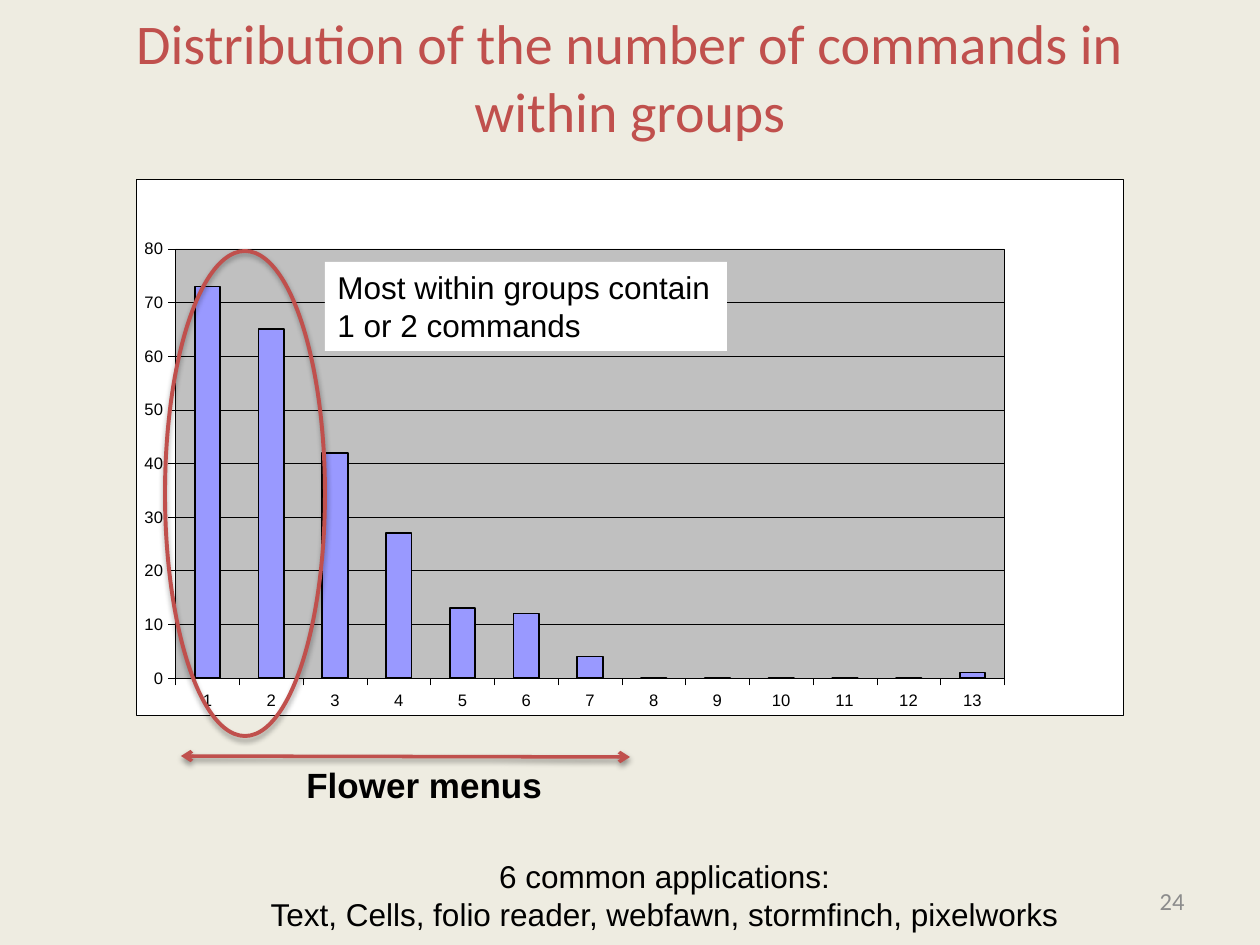
from lxml.etree import SubElement
from pptx import Presentation
from pptx.chart.data import CategoryChartData
from pptx.dml.color import RGBColor
from pptx.enum.chart import XL_CHART_TYPE, XL_TICK_MARK
from pptx.enum.shapes import MSO_CONNECTOR, MSO_SHAPE
from pptx.enum.text import MSO_ANCHOR, MSO_AUTO_SIZE, PP_ALIGN
from pptx.oxml import parse_xml
from pptx.oxml.ns import nsdecls, qn
from pptx.util import Emu, Pt

PX = 914400 / 126
THEME = {
    "background": RGBColor(0xEE, 0xEC, 0xE1), "accent": RGBColor(0xC0, 0x50, 0x4D),
    "ink": RGBColor(0, 0, 0), "muted": RGBColor(0x8C, 0x8C, 0x8C),
    "white": RGBColor(255, 255, 255), "plot": RGBColor(0xC0, 0xC0, 0xC0),
    "bar": RGBColor(0x99, 0x99, 0xFF),
    "body_font": "Arial", "title_font": "Calibri",
    "title": Pt(32), "label": Pt(20), "body": Pt(18), "number": Pt(14), "axis": Pt(9.5),
}


def px(*lengths):
    return [Emu(round(length * PX)) for length in lengths]


def write(shape, lines, font, frame_format, align=PP_ALIGN.LEFT):
    """Fill a shape with one paragraph per line, all in the same format."""
    frame = shape.text_frame
    for name, value in frame_format.items():
        setattr(frame, name, value)
    for index, line in enumerate(lines):
        paragraph = frame.paragraphs[0] if index == 0 else frame.add_paragraph()
        paragraph.text = line
        paragraph.alignment = align
        color = font["color"]
        paragraph.font.color.rgb = color
        for name in font.keys() - {"color"}:
            setattr(paragraph.font, name, font[name])


prs = Presentation()
prs.slide_width, prs.slide_height = px(1260, 945)
slide = prs.slides.add_slide(prs.slide_layouts[6])
slide.background.fill.solid()
slide.background.fill.fore_color.rgb = THEME["background"]
shapes = slide.shapes

# Distribution chart
distribution = CategoryChartData()
distribution.categories = [str(size) for size in range(1, 14)]
distribution.add_series("Series 1", [73, 65, 42, 27, 13, 12, 4, 0, 0, 0, 0, 0, 1])
chart = shapes.add_chart(
    XL_CHART_TYPE.COLUMN_CLUSTERED, *px(136, 179, 987, 537), distribution).chart
chart.has_legend = chart.has_title = False
chart.font.name, chart.font.size = THEME["body_font"], THEME["axis"]
chart.font.color.rgb = THEME["ink"]

chart.value_axis.maximum_scale = 80
chart.value_axis.minimum_scale = 0
chart.value_axis.major_unit = 10
chart.value_axis.has_major_gridlines = True
for axis in (chart.category_axis, chart.value_axis):
    axis.major_tick_mark = XL_TICK_MARK.OUTSIDE
for rule in (chart.category_axis.format.line, chart.value_axis.format.line,
             chart.value_axis.major_gridlines.format.line):
    rule.color.rgb, rule.width = THEME["ink"], Pt(0.25)

plot = chart.plots[0]
plot.gap_width = 150
plot.vary_by_categories = False
bars = plot.series[0]
bars.format.fill.solid()
bars.format.fill.fore_color.rgb = THEME["bar"]
bars.format.line.color.rgb, bars.format.line.width = THEME["ink"], Pt(1)

chart_root = chart.element.find(qn("c:chart"))
plot_area = chart_root.find(qn("c:plotArea"))
for old_layout in plot_area.findall(qn("c:layout")):
    plot_area.remove(old_layout)
layout = parse_xml(f'<c:layout {nsdecls("c")}><c:manualLayout/></c:layout>')
settings = {"layoutTarget": "inner", "xMode": "edge", "yMode": "edge",
            "x": 0.04, "y": 0.13, "w": 0.84, "h": 0.8}
for name, value in settings.items():
    SubElement(layout[0], qn(f"c:{name}")).set("val", str(value))
plot_area.insert(0, layout)

for last_part, fill in ((plot_area[-1], THEME["plot"]), (chart_root, THEME["white"])):
    last_part.addnext(parse_xml(
        f'<c:spPr {nsdecls("c", "a")}><a:solidFill><a:srgbClr val="{fill}"/></a:solidFill>'
        f'<a:ln w="3175"><a:solidFill><a:srgbClr val="{THEME["ink"]}"/></a:solidFill></a:ln>'
        '</c:spPr>'))

# Range covered by flower menus
menu_range = shapes.add_connector(MSO_CONNECTOR.STRAIGHT, *px(181, 756, 630, 757))
menu_range.line.color.rgb, menu_range.line.width = THEME["accent"], Pt(2)
for end in ("headEnd", "tailEnd"):
    SubElement(menu_range.line._get_or_add_ln(), qn(f"a:{end}")).set("type", "arrow")

# Text around the chart
body_font = {"name": THEME["body_font"], "size": THEME["body"], "color": THEME["ink"]}
label_font = body_font | {"size": THEME["label"], "bold": True}
title_font = {"name": THEME["title_font"], "size": THEME["title"], "color": THEME["accent"]}
number_font = title_font | {"size": THEME["number"], "color": THEME["muted"]}
growing = {"word_wrap": True, "auto_size": MSO_AUTO_SIZE.SHAPE_TO_FIT_TEXT}
unwrapped = growing | {"word_wrap": False}
centred = {"word_wrap": True, "vertical_anchor": MSO_ANCHOR.MIDDLE}
applications = ["6 common applications:",
                "Text, Cells, folio reader, webfawn, stormfinch, pixelworks"]
for box, lines, font, frame_format, align in (
    ((294, 757, 263, 55), ["Flower menus"], label_font, unwrapped, PP_ALIGN.LEFT),
    ((165, 851, 999, 89), applications, body_font, growing, PP_ALIGN.CENTER),
    ((63, 21, 1134, 110), ["Distribution of the number of commands in within groups"],
     title_font, centred, PP_ALIGN.CENTER),
    ((903, 876, 294, 50), ["24"], number_font, centred, PP_ALIGN.RIGHT),
):
    write(shapes.add_textbox(*px(*box)), lines, font, frame_format, align)

# Highlight of the two tallest bars, with its remark
highlight = shapes.add_group_shape().shapes
ring = highlight.add_shape(MSO_SHAPE.OVAL, *px(165, 251, 160, 485))
ring.fill.background()
ring.line.color.rgb, ring.line.width = THEME["accent"], Pt(2.25)
remark = highlight.add_shape(MSO_SHAPE.RECTANGLE, *px(325, 262, 402, 89))
remark.shadow.inherit = False
remark.fill.solid()
remark.fill.fore_color.rgb = THEME["white"]
remark.line.fill.background()
write(remark, ["Most within groups contain\v1 or 2 commands"], body_font,
      unwrapped | {"vertical_anchor": MSO_ANCHOR.TOP})

# Soft shadows falling straight down
for marked, opacity in ((menu_range, 38), (ring, 35)):
    marked._element.spPr.append(parse_xml(
        f'<a:effectLst {nsdecls("a")}><a:outerShdw blurRad="{Pt(3.1)}" dist="{Pt(1.7)}" '
        f'dir="5400000" rotWithShape="0"><a:srgbClr val="{THEME["ink"]}">'
        f'<a:alpha val="{opacity * 1000}"/></a:srgbClr></a:outerShdw></a:effectLst>'))

prs.save("out.pptx")
